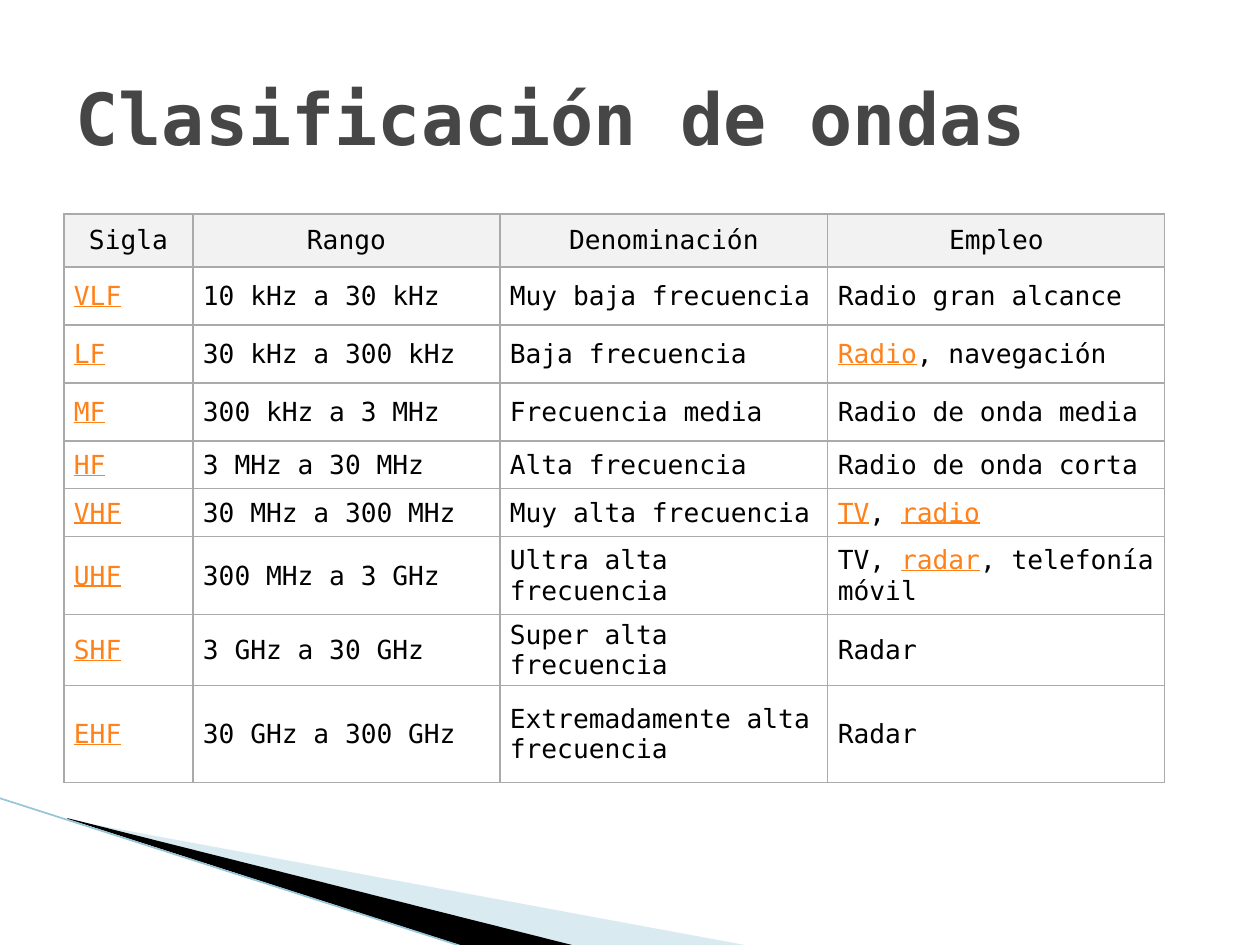
from lxml.etree import SubElement
from pptx import Presentation
from pptx.dml.color import RGBColor
from pptx.enum.shapes import MSO_CONNECTOR
from pptx.enum.text import MSO_ANCHOR, PP_ALIGN
from pptx.oxml.ns import qn
from pptx.util import Emu, Pt

SCALE = 914400 / 126
FONT = "DejaVu Sans Mono"
BLACK = RGBColor(0x00, 0x00, 0x00)
GRAY = RGBColor(0x46, 0x46, 0x46)
LINK = RGBColor(0xFF, 0x81, 0x19)
HEADER = RGBColor(0xF2, 0xF2, 0xF2)
PALE_BLUE = RGBColor(0xA0, 0xCB, 0xDC)
LINE_BLUE = RGBColor(0x97, 0xC5, 0xD8)
BORDER = "AAAAAA"

COLS = [129, 307, 328, 337]
ROW_HEIGHTS = [53, 58, 58, 58, 48, 48, 78, 40, 97]
# Text in square brackets is shown as a link
ROWS = [
    ["Sigla", "Rango", "Denominación", "Empleo"],
    ["[VLF]", "10 kHz a 30 kHz", "Muy baja frecuencia", "Radio gran alcance"],
    ["[LF]", "30 kHz a 300 kHz", "Baja frecuencia", "[Radio], navegación"],
    ["[MF]", "300 kHz a 3 MHz", "Frecuencia media", "Radio de onda media"],
    ["[HF]", "3 MHz a 30 MHz", "Alta frecuencia", "Radio de onda corta"],
    ["[VHF]", "30 MHz a 300 MHz", "Muy alta frecuencia", "[TV], [radio]"],
    ["[UHF]", "300 MHz a 3 GHz", "Ultra alta frecuencia", "TV, [radar], telefonía móvil"],
    ["[SHF]", "3 GHz a 30 GHz", "Super alta frecuencia", "Radar"],
    ["[EHF]", "30 GHz a 300 GHz", "Extremadamente alta frecuencia", "Radar"],
]


def px(n):
    return Emu(round(n * SCALE))


def style_run(r, size, color, bold=False, underline=False):
    r.font.name = FONT
    r.font.size = Pt(size)
    r.font.color.rgb = color
    r.font.bold = bold
    r.font.underline = underline


def add_wedge(s, points, color, alpha=None):
    builder = s.shapes.build_freeform(*points[0], scale=SCALE)
    builder.add_line_segments(points[1:], close=True)
    sp = builder.convert_to_shape()
    sp.shadow.inherit = False
    sp.fill.solid()
    sp.fill.fore_color.rgb = color
    sp.line.fill.background()
    if alpha is not None:
        clr = next(sp.fill._xPr.iter(qn("a:srgbClr")))
        SubElement(clr, qn("a:alpha"), val=str(alpha * 1000))


def add_line(s, x1, y1, x2, y2):
    line = s.shapes.add_connector(MSO_CONNECTOR.STRAIGHT, px(x1), px(y1), px(x2), px(y2))
    line.line.color.rgb = LINE_BLUE
    line.line.width = Pt(0.95)
    SubElement(line._element.spPr, qn("a:effectLst"))


def set_title(s, text):
    sp = s.shapes.title
    sp.left, sp.top, sp.width, sp.height = px(63), px(38), px(1134), px(157)
    tf = sp.text_frame
    tf.text = text
    tf.vertical_anchor = MSO_ANCHOR.MIDDLE
    p = tf.paragraphs[0]
    p.alignment = PP_ALIGN.LEFT
    style_run(p.runs[0], 41, GRAY, bold=True)


def set_borders(cell):
    tc_pr = cell._tc.get_or_add_tcPr()
    for i, side in enumerate(("lnL", "lnR", "lnT", "lnB")):
        ln = tc_pr.makeelement(qn(f"a:{side}"), {"w": str(Pt(0.75))})
        fill = SubElement(ln, qn("a:solidFill"))
        SubElement(fill, qn("a:srgbClr"), val=BORDER)
        tc_pr.insert(i, ln)


def fill_cell(cell, text, header):
    cell.margin_left = cell.margin_right = px(10)
    cell.margin_top = cell.margin_bottom = px(5)
    cell.vertical_anchor = MSO_ANCHOR.MIDDLE
    p = cell.text_frame.paragraphs[0]
    p.alignment = PP_ALIGN.CENTER if header else PP_ALIGN.LEFT
    # Odd pieces are the bracketed ones
    for i, piece in enumerate(text.replace("]", "[").split("[")):
        if piece:
            r = p.add_run()
            r.text = piece
            is_link = i % 2 == 1
            style_run(r, 15, LINK if is_link else BLACK, underline=is_link)
    if header:
        cell.fill.solid()
        cell.fill.fore_color.rgb = HEADER
    else:
        cell.fill.background()
    set_borders(cell)


def add_wave_table(s):
    frame = s.shapes.add_table(len(ROWS), len(COLS), px(64), px(214),
                               px(sum(COLS)), px(sum(ROW_HEIGHTS)))
    table = frame.table
    table.first_row = table.horz_banding = False
    for col, width in zip(table.columns, COLS):
        col.width = px(width)
    for i, (row, height) in enumerate(zip(table.rows, ROW_HEIGHTS)):
        row.height = px(height)
        for cell, text in zip(row.cells, ROWS[i]):
            fill_cell(cell, text, header=i == 0)


def main():
    prs = Presentation()
    prs.slide_width, prs.slide_height = px(1260), px(945)
    s = prs.slides.add_slide(prs.slide_layouts[5])

    # Corner decoration
    add_wedge(s, [(69, 820), (750, 946), (575, 946), (69, 819)], PALE_BLUE, alpha=40)
    add_wedge(s, [(67, 818), (576, 946), (469, 948), (68, 819)], BLACK)
    add_line(s, -1, 798, 467, 948)

    # Content
    set_title(s, "Clasificación de ondas")
    add_wave_table(s)
    prs.save("out.pptx")


if __name__ == "__main__":
    main()
